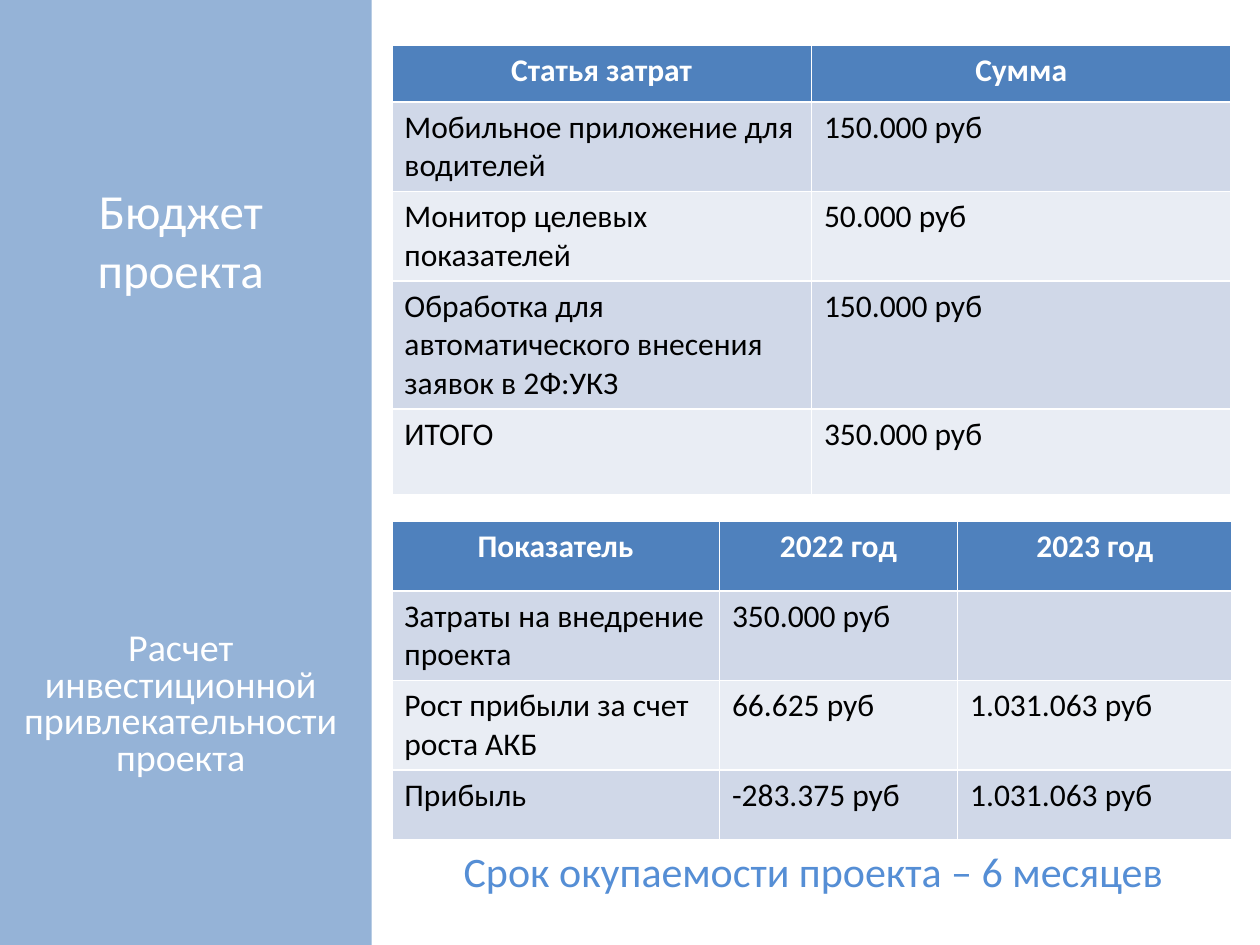
"""Build the project budget and investment appeal slide."""
import dataclasses

import pptx
import pptx.dml.color
import pptx.enum.shapes
import pptx.enum.text
import pptx.util

Inches = pptx.util.Inches
ALIGN = pptx.enum.text.PP_ALIGN
ANCHOR = pptx.enum.text.MSO_ANCHOR

COLORS = {
    "panel": "95B3D7",
    "header": "4F81BD",
    "odd": "D0D8E8",
    "even": "E9EDF4",
    "white": "FFFFFF",
    "black": "000000",
    "accent": "558ED5",
}
PANEL_TEXT_W, PANEL_TEXT_H = 2.87, 1.34
CONTENT_LEFT = 3.11


@dataclasses.dataclass
class TableSpec:
    top: float
    widths: list[float]
    heights: list[float]
    rows: list[list[str]]


TABLES = [
    TableSpec(0.36, [3.33, 3.33], [0.45, 0.68, 0.68, 0.96, 0.68], [
        ["Статья затрат", "Сумма"],
        ["Мобильное приложение для водителей", "150.000 руб"],
        ["Монитор целевых показателей", "50.000 руб"],
        ["Обработка для автоматического внесения заявок в 2Ф:УКЗ", "150.000 руб"],
        ["ИТОГО", "350.000 руб"],
    ]),
    TableSpec(4.14, [2.6, 1.89, 2.18], [0.55] * 4, [
        ["Показатель", "2022 год", "2023 год"],
        ["Затраты на внедрение проекта", "350.000 руб", ""],
        ["Рост прибыли за счет роста АКБ", "66.625 руб", "1.031.063 руб"],
        ["Прибыль", "-283.375 руб", "1.031.063 руб"],
    ]),
]


def rgb(name: str) -> pptx.dml.color.RGBColor:
    return pptx.dml.color.RGBColor.from_string(COLORS[name])


def write(tf, text: str, *, size: float, color: str, bold: bool = False,
          align=ALIGN.CENTER, anchor=None, spacing: float | None = None) -> None:
    tf.word_wrap = True
    if anchor is not None:
        tf.vertical_anchor = anchor
    p = tf.paragraphs[0]
    p.alignment = align
    p.line_spacing = spacing
    p.font.size = pptx.util.Pt(size)
    if text:
        r = p.add_run()
        r.text = text
        r.font.name = "Calibri"
        r.font.size = pptx.util.Pt(size)
        r.font.bold = bold
        r.font.color.rgb = rgb(color)


def add_text(s, left: float, top: float, width: float, height: float,
             text: str, **fmt) -> None:
    sp = s.shapes.add_textbox(Inches(left), Inches(top), Inches(width), Inches(height))
    write(sp.text_frame, text, **fmt)


def add_table(s, spec: TableSpec) -> None:
    frame = s.shapes.add_table(
        len(spec.rows), len(spec.widths), Inches(CONTENT_LEFT), Inches(spec.top),
        Inches(sum(spec.widths)), Inches(sum(spec.heights)))
    table = frame.table
    for column, width in zip(table.columns, spec.widths):
        column.width = Inches(width)
    for i, (row, height) in enumerate(zip(table.rows, spec.heights)):
        row.height = Inches(height)
        header = i == 0
        fill = "header" if header else "odd" if i % 2 else "even"
        for cell, text in zip(row.cells, spec.rows[i]):
            cell.fill.solid()
            cell.fill.fore_color.rgb = rgb(fill)
            write(cell.text_frame, text, size=18, bold=header,
                  color="white" if header else "black",
                  align=ALIGN.CENTER if header else ALIGN.LEFT)


def main() -> None:
    prs = pptx.Presentation()
    prs.slide_width, prs.slide_height = Inches(10), Inches(7.5)
    s = prs.slides.add_slide(prs.slide_layouts[5])

    panel = s.shapes.add_shape(pptx.enum.shapes.MSO_SHAPE.RECTANGLE,
                               0, 0, Inches(2.95), prs.slide_height)
    panel.shadow.inherit = False
    panel.fill.solid()
    panel.fill.fore_color.rgb = rgb("panel")
    panel.line.fill.background()

    title = s.shapes.title
    title.element.getparent().append(title.element)
    title.left, title.top = Inches(0), Inches(1.23)
    title.width, title.height = Inches(PANEL_TEXT_W), Inches(PANEL_TEXT_H)
    write(title.text_frame, "Бюджет проекта", size=28, color="white",
          anchor=ANCHOR.MIDDLE)

    for spec in TABLES:
        add_table(s, spec)
    add_text(s, CONTENT_LEFT, 6.66, 6.69, 0.63,
             "Срок окупаемости проекта – 6 месяцев", size=24, color="accent")
    add_text(s, 0, 4.93, PANEL_TEXT_W, PANEL_TEXT_H,
             "Расчет инвестиционной привлекательности проекта", size=21.7,
             color="white", anchor=ANCHOR.MIDDLE, spacing=0.8)
    prs.save("out.pptx")


if __name__ == "__main__":
    main()
